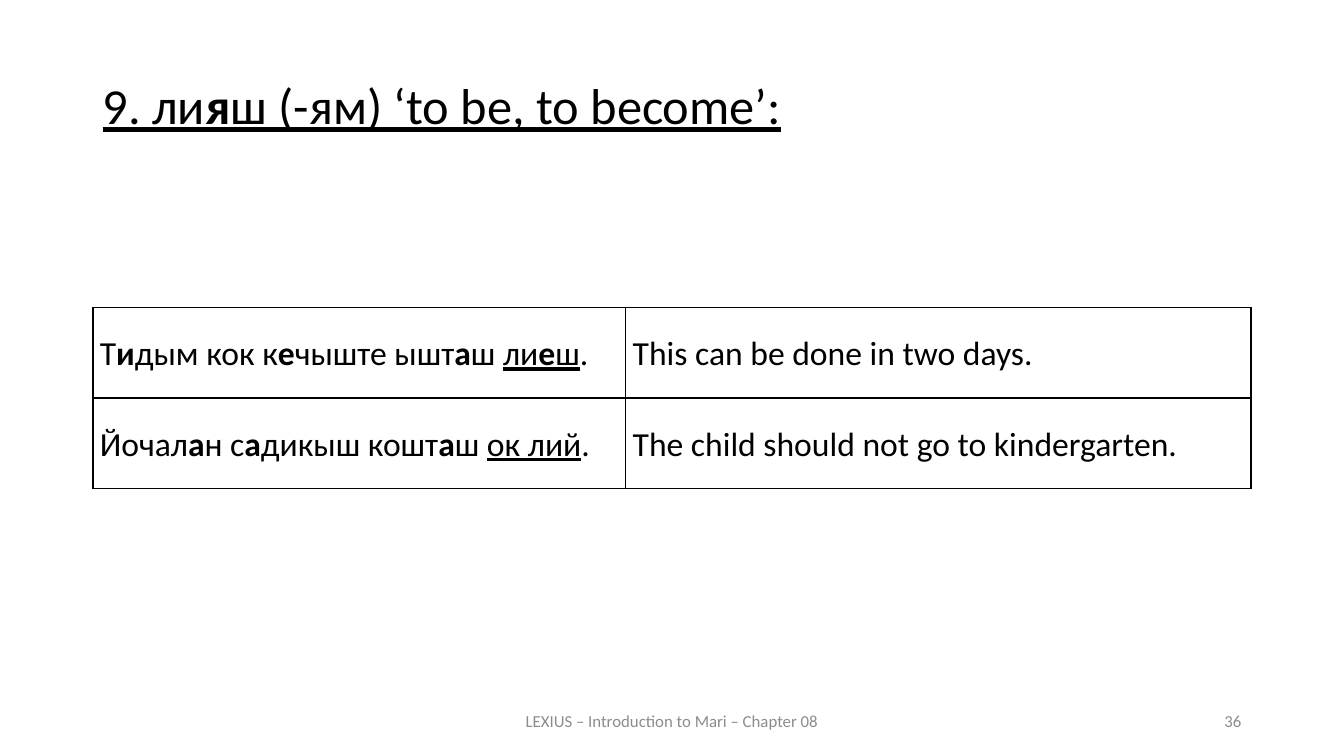
from dataclasses import dataclass

from lxml import etree
from pptx import Presentation
from pptx.dml.color import RGBColor
from pptx.enum.text import MSO_ANCHOR, PP_ALIGN
from pptx.oxml.ns import qn
from pptx.util import Inches, Pt

LEFT, CENTER, RIGHT, JUSTIFY = PP_ALIGN.LEFT, PP_ALIGN.CENTER, PP_ALIGN.RIGHT, PP_ALIGN.JUSTIFY
TOP, MIDDLE = MSO_ANCHOR.TOP, MSO_ANCHOR.MIDDLE


@dataclass(frozen=True)
class Theme:
    font: str = "Calibri"
    ink: str = "000000"
    muted: str = "8C8C8C"
    title: int = 36
    body: int = 24
    small: int = 12
    rule: float = 1
    heavy_rule: float = 1.5


THEME = Theme()
WIDTH, HEIGHT = Inches(13.33), Inches(7.5)
MARGIN = 0.069
CONTENT = 1 - 2 * MARGIN

HEADING = "_9. ли*я*ш (-ям) ‘to be, to become’:_"
EXAMPLES = [
    ("Т*и*дым кок к*е*чыште ышт*а*ш _ли*е*ш_.", "This can be done in two days."),
    ("Йочал*а*н с*а*дикыш кошт*а*ш _ок лий_.", "The child should not go to kindergarten."),
]
COURSE = "LEXIUS – Introduction to Mari – Chapter 08"
PAGE = "36"


def share(left, top, width, height):
    return (round(left * WIDTH), round(top * HEIGHT),
            round(width * WIDTH), round(height * HEIGHT))


def write(frame, marked, size=THEME.body, color=THEME.ink, align=LEFT,
          spacing=1.0, before=0):
    """Asterisks toggle bold and underscores toggle underline."""
    paragraph = frame.paragraphs[0]
    paragraph.alignment = align
    paragraph.line_spacing = spacing
    paragraph.space_before = Pt(before)
    for i, underlined in enumerate(marked.split("_")):
        for j, piece in enumerate(underlined.split("*")):
            if piece:
                run = paragraph.add_run()
                run.text = piece
                run.font.name = THEME.font
                run.font.size = Pt(size)
                run.font.color.rgb = RGBColor.from_string(color)
                run.font.bold = j % 2 == 1
                run.font.underline = i % 2 == 1


def add_label(slide, box, marked, anchor=MIDDLE, **text_format):
    frame = slide.shapes.add_textbox(*box).text_frame
    frame.word_wrap = True
    frame.vertical_anchor = anchor
    write(frame, marked, **text_format)


def add_border(cell, side, points):
    line = etree.SubElement(cell._tc.get_or_add_tcPr(), qn(f"a:ln{side}"), w=str(Pt(points)))
    fill = etree.SubElement(line, qn("a:solidFill"))
    etree.SubElement(fill, qn("a:srgbClr"), val=THEME.ink)


def add_heading(slide, box):
    add_label(slide, box, HEADING, anchor=TOP, size=THEME.title,
              align=JUSTIFY, spacing=0.9, before=12)


def add_examples(slide, box):
    width, height = box[2:]
    table = slide.shapes.add_table(len(EXAMPLES), 2, *box).table
    table.first_row = table.horz_banding = False
    for column, portion in zip(table.columns, (0.46, 0.54)):
        column.width = round(width * portion)
    for row, pair in enumerate(EXAMPLES):
        table.rows[row].height = height // len(EXAMPLES)
        for column, sentence in enumerate(pair):
            cell = table.cell(row, column)
            cell.margin_left = cell.margin_right = Inches(0.07)
            cell.margin_top = cell.margin_bottom = 0
            cell.vertical_anchor = MIDDLE
            outer_side = "LR"[column]
            for side in "LRTB":
                add_border(cell, side, THEME.heavy_rule if side == outer_side else THEME.rule)
            cell.fill.background()
            write(cell.text_frame, sentence, spacing=1.07)


def add_footer(slide, box):
    left, top, width, height = box
    small = {"size": THEME.small, "color": THEME.muted}
    course_width, page_width = round(width * 0.39), round(width * 0.26)
    add_label(slide, (left + (width - course_width) // 2, top, course_width, height),
              COURSE, align=CENTER, **small)
    add_label(slide, (left + width - page_width, top, page_width, height),
              PAGE, align=RIGHT, **small)


def main():
    deck = Presentation()
    deck.slide_width, deck.slide_height = WIDTH, HEIGHT
    slide = deck.slides.add_slide(deck.slide_layouts[6])
    add_heading(slide, share(MARGIN, 0.101, CONTENT, 0.132))
    add_examples(slide, share(MARGIN, 0.407, CONTENT, 0.239))
    add_footer(slide, share(MARGIN, 0.927, CONTENT, 0.053))
    deck.save("out.pptx")


if __name__ == "__main__":
    main()
